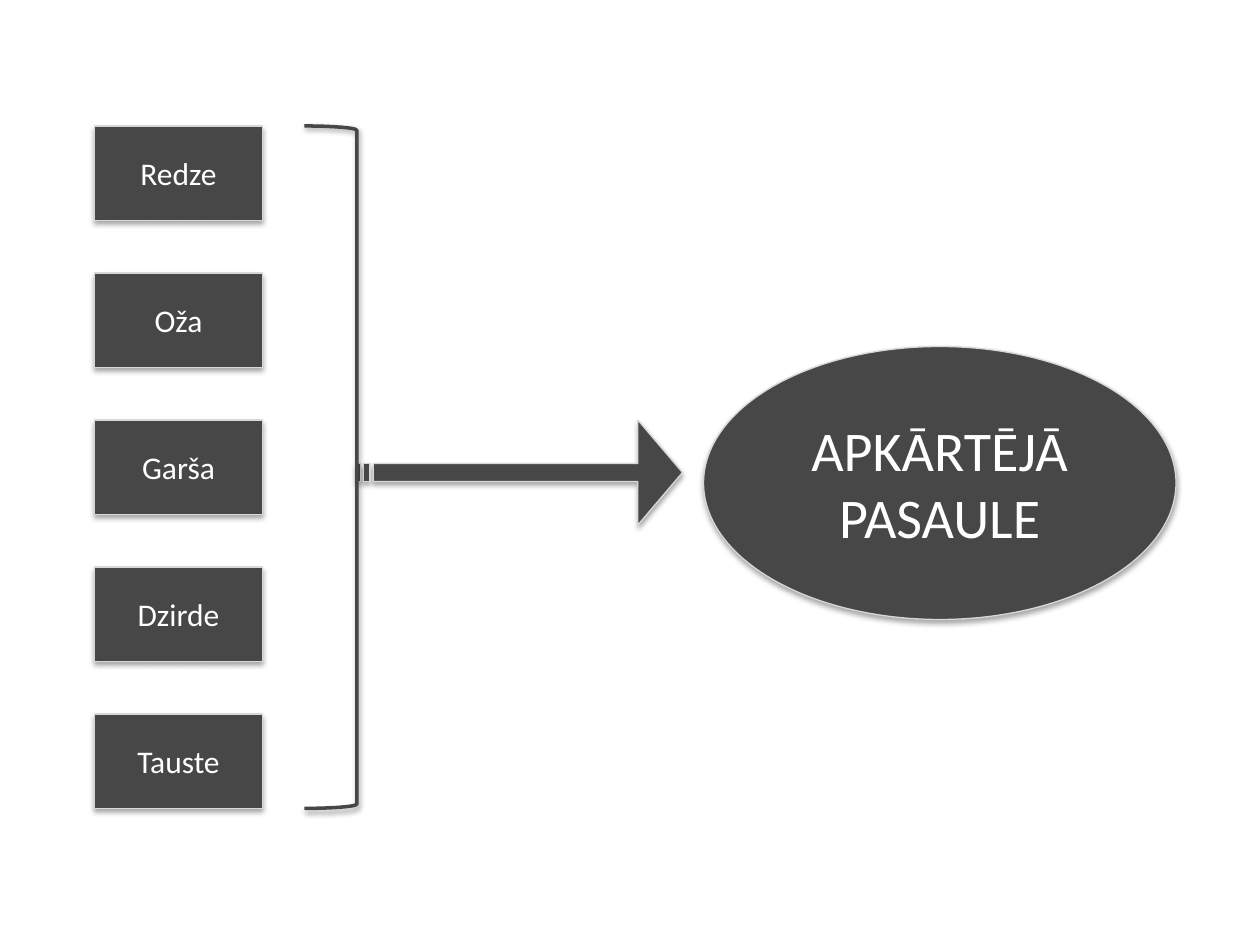
from lxml import etree
from pptx import Presentation
from pptx.dml.color import RGBColor
from pptx.enum.shapes import MSO_SHAPE
from pptx.enum.text import MSO_ANCHOR, PP_ALIGN
from pptx.oxml.ns import qn
from pptx.util import Pt

RECTANGLE = MSO_SHAPE.RECTANGLE
OVAL = MSO_SHAPE.OVAL
BRACKET = MSO_SHAPE.RIGHT_BRACKET
STRIPED_ARROW = MSO_SHAPE.STRIPED_RIGHT_ARROW
MIDDLE = MSO_ANCHOR.MIDDLE
CENTER = PP_ALIGN.CENTER

FONT = "Calibri"
DARK = "474747"
EDGE = "D8D8D8"
WHITE = "FFFFFF"
SENSES = ["Redze", "Oža", "Garša", "Dzirde", "Tauste"]


def color(hex_code):
    """Turn a hex string into a colour."""
    return RGBColor.from_string(hex_code)


def add_shadow(shape, opacity, distance):
    """Give a shape a soft black shadow falling straight down."""
    shape.shadow.inherit = False
    effects = shape._element.spPr.find(qn("a:effectLst"))
    shadow = etree.SubElement(
        effects, qn("a:outerShdw"), blurRad=str(Pt(3.1)), dist=str(Pt(distance)),
        dir="5400000", algn="ctr", rotWithShape="0")
    black = etree.SubElement(shadow, qn("a:srgbClr"), val="000000")
    etree.SubElement(black, qn("a:alpha"), val=str(opacity * 1000))


def draw(slide, kind, box, fill=DARK, line=EDGE, width=0.75, opacity=35, distance=1.8):
    """Add a shadowed shape in a (left, top, width, height) box of points."""
    shape = slide.shapes.add_shape(kind, *map(Pt, box))
    if fill:
        shape.fill.solid()
        shape.fill.fore_color.rgb = color(fill)
    else:
        shape.fill.background()
    shape.line.color.rgb = color(line)
    shape.line.width = Pt(width)
    add_shadow(shape, opacity, distance)
    return shape


def write(shape, text, size=18, ink=WHITE):
    """Write centred text, one paragraph for each line."""
    frame = shape.text_frame
    frame.word_wrap = True
    frame.vertical_anchor = MIDDLE
    frame.text = text
    for paragraph in frame.paragraphs:
        paragraph.alignment = CENTER
        paragraph.font.name = FONT
        paragraph.font.size = Pt(size)
        paragraph.font.color.rgb = color(ink)


def add_senses(slide, box, item_height=54):
    """Stack the sense boxes evenly over the height of the box."""
    left, top, width, height = box
    pitch = (height - item_height) / (len(SENSES) - 1)
    for index, sense in enumerate(SENSES):
        item = draw(slide, RECTANGLE, (left, top + index * pitch, width, item_height))
        write(item, sense)


def add_flow(slide, box, bracket_width=30, arrow_height=60):
    """Draw the bracket at the left of the box and the arrow leading right."""
    left, top, width, height = box
    arrow_top = top + 168
    arrow = draw(slide, STRIPED_ARROW,
                 (left + bracket_width, arrow_top, width - bracket_width, arrow_height))
    arrow.adjustments[0] = 0.17
    arrow.adjustments[1] = 0.425
    draw(slide, BRACKET, (left, top, bracket_width, height),
         fill=None, line=DARK, width=2, opacity=38, distance=1.6)


def add_world(slide, box):
    """Draw the ellipse that names the surrounding world."""
    world = draw(slide, OVAL, box)
    write(world, "APKĀRTĒJĀ\nPASAULE", size=32)


def main():
    """Build the slide and save it."""
    deck = Presentation()
    deck.slide_width, deck.slide_height = Pt(720), Pt(540)
    slide = deck.slides.add_slide(deck.slide_layouts[6])
    slide.background.fill.solid()
    slide.background.fill.fore_color.rgb = color(WHITE)
    add_senses(slide, (54, 72, 96, 390))
    add_flow(slide, (174, 72, 216, 390))
    add_world(slide, (402, 198, 270, 156))
    deck.save("out.pptx")


if __name__ == "__main__":
    main()
